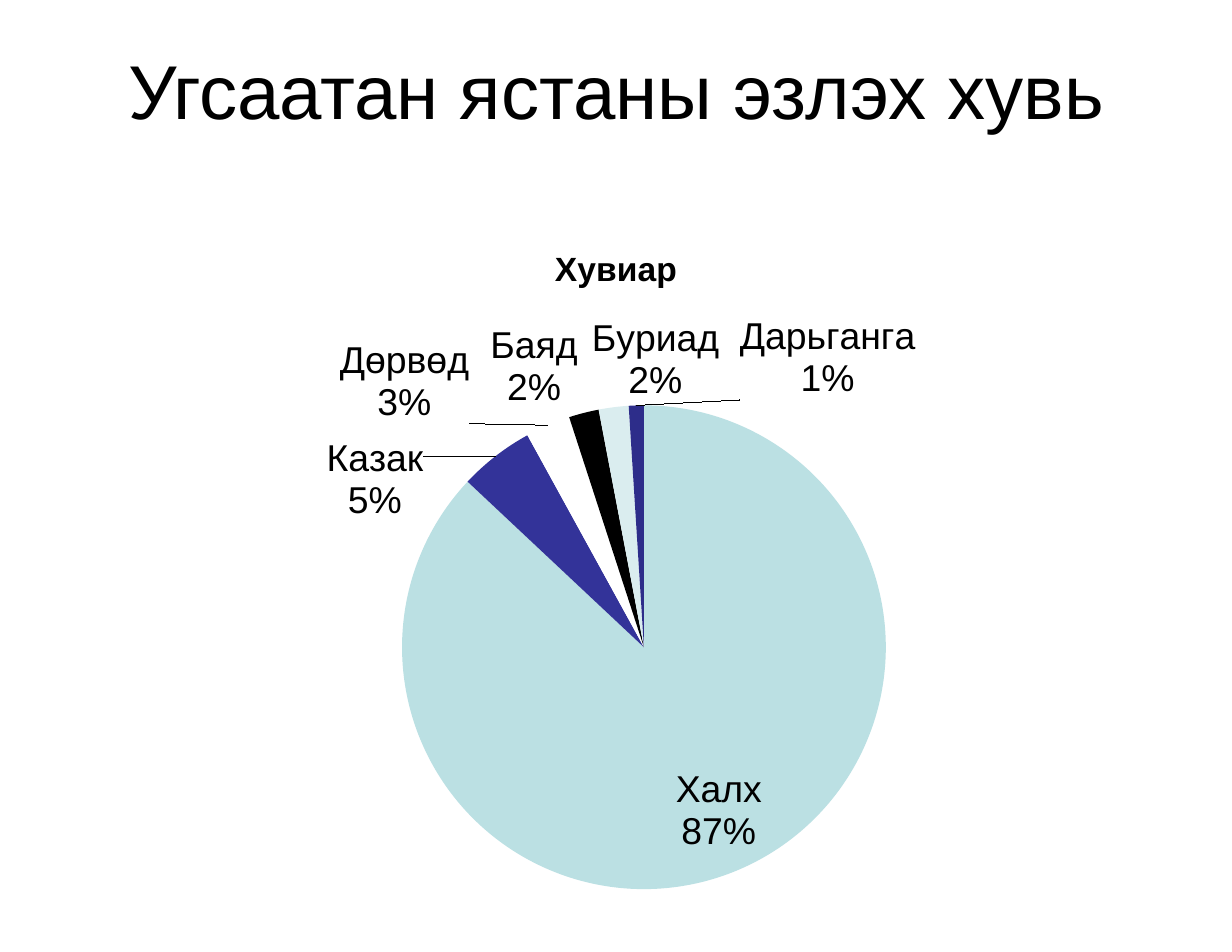
from lxml.etree import SubElement
from pptx import Presentation
from pptx.chart.data import CategoryChartData
from pptx.dml.color import RGBColor
from pptx.enum.chart import XL_CHART_TYPE, XL_LABEL_POSITION
from pptx.enum.text import MSO_ANCHOR, PP_ALIGN
from pptx.oxml.ns import qn
from pptx.util import Inches, Pt

FONT = "Arial"
COLORS = {
    "text": "000000",
    "Халх": "BBE0E3",
    "Казак": "333399",
    "Дөрвөд": "FFFFFF",
    "Баяд": "000000",
    "Буриад": "DAEDEF",
    "Дарьганга": "2D2D8A",
}
SHARES = {"Халх": 87, "Казак": 5, "Дөрвөд": 3, "Баяд": 2, "Буриад": 2, "Дарьганга": 1}
# Label shifts from their usual place, in inches
LABEL_SHIFTS = {
    "Халх": (0.22, -0.09),
    "Казак": (-0.61, 0.63),
    "Дөрвөд": (-0.68, 0.04),
    "Баяд": (-0.04, 0.02),
    "Буриад": (0.95, 0.01),
    "Дарьганга": (1.71, 0.01),
}
# Chart frame and pie, in inches
CHART_LEFT, CHART_TOP, CHART_WIDTH, CHART_HEIGHT = 0.55, 1.98, 9.9, 6.1
PIE_LEFT, PIE_TOP, PIE_SIZE = 3.59, 3.62, 4.32


def style_font(font, size, bold=False):
    font.name = FONT
    font.size = Pt(size)
    font.bold = bold
    font.color.rgb = RGBColor.from_string(COLORS["text"])


def add_layout(parent, index, **values):
    """Put a manual chart layout into parent at the given child index."""
    for old in parent.findall(qn("c:layout")):
        parent.remove(old)
    layout = SubElement(parent, qn("c:layout"))
    parent.insert(index, layout)
    manual = SubElement(layout, qn("c:manualLayout"))
    for name, value in values.items():
        SubElement(manual, qn(f"c:{name}")).set("val", str(value))


def set_title(page, text):
    title = page.shapes.title
    title.left, title.top = Inches(0.55), Inches(0.34)
    title.width, title.height = Inches(9.9), Inches(1.42)
    frame = title.text_frame
    frame.text = text
    frame.vertical_anchor = MSO_ANCHOR.TOP
    frame.margin_top = Inches(0.05)
    para = frame.paragraphs[0]
    para.alignment = PP_ALIGN.CENTER
    style_font(para.runs[0].font, 49)


def label_slices(series):
    for index, name in enumerate(SHARES):
        label = series.points[index].data_label
        inside = name == "Халх"
        label.position = XL_LABEL_POSITION.INSIDE_END if inside else XL_LABEL_POSITION.OUTSIDE_END
        style_font(label.font, 24)

    labels = series.data_labels
    labels.show_value = False
    labels.show_category_name = labels.show_percentage = True
    style_font(labels.font, 24)

    # Name and percentage on separate lines, each label moved in place
    for name, element in zip(SHARES, labels._element.findall(qn("c:dLbl"))):
        for flag, value in (("showVal", 0), ("showCatName", 1), ("showPercent", 1)):
            element.find(qn(f"c:{flag}")).set("val", str(value))
        SubElement(element, qn("c:separator")).text = "\n"
        right, down = LABEL_SHIFTS[name]
        add_layout(element, 1, x=right / CHART_WIDTH, y=down / CHART_HEIGHT)


def add_pie(page, heading):
    data = CategoryChartData()
    data.categories = list(SHARES)
    data.add_series(heading, list(SHARES.values()))
    chart = page.shapes.add_chart(
        XL_CHART_TYPE.PIE, Inches(CHART_LEFT), Inches(CHART_TOP),
        Inches(CHART_WIDTH), Inches(CHART_HEIGHT), data
    ).chart
    style_font(chart.font, 18)
    chart.has_legend = False

    # Heading
    chart.has_title = True
    chart.chart_title.text_frame.text = heading
    style_font(chart.chart_title.text_frame.paragraphs[0].runs[0].font, 21.6, bold=True)

    # Slices
    plot = chart.plots[0]
    plot.vary_by_categories = True
    series = plot.series[0]
    for index, name in enumerate(SHARES):
        point = series.points[index].format
        point.fill.solid()
        point.fill.fore_color.rgb = RGBColor.from_string(COLORS[name])
        point.line.fill.background()
    label_slices(series)

    # Place of the pie inside the chart
    plot_area = chart._chartSpace.chart.plotArea
    add_layout(plot_area, 0, layoutTarget="inner", xMode="edge", yMode="edge",
               x=(PIE_LEFT - CHART_LEFT) / CHART_WIDTH,
               y=(PIE_TOP - CHART_TOP) / CHART_HEIGHT,
               w=PIE_SIZE / CHART_WIDTH, h=PIE_SIZE / CHART_HEIGHT)


def main():
    deck = Presentation()
    deck.slide_width, deck.slide_height = Inches(11), Inches(8.5)
    page = deck.slides.add_slide(deck.slide_layouts[5])
    set_title(page, "Угсаатан ястаны эзлэх хувь")
    add_pie(page, "Хувиар")
    deck.save("out.pptx")


if __name__ == "__main__":
    main()
